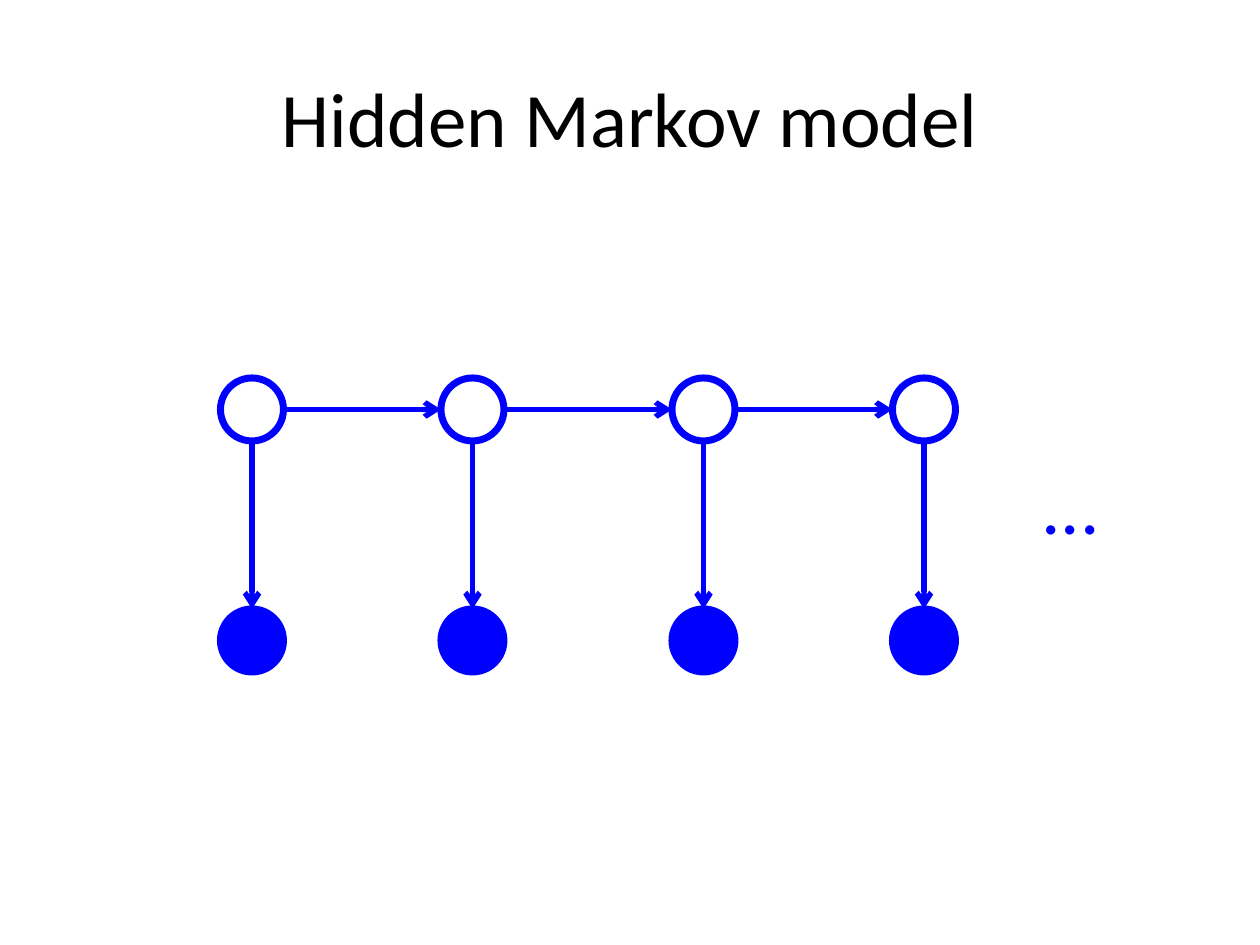
import pptx
import pptx.util
import pptx.dml.color
import pptx.enum.shapes
import pptx.enum.text
import pptx.oxml.ns
import lxml.etree

BLUE = pptx.dml.color.RGBColor(0x00, 0x00, 0xFF)
BLACK = pptx.dml.color.RGBColor(0x00, 0x00, 0x00)

# Grid of 120 columns by 90 rows: twelve units to the inch
UNIT = pptx.util.Inches(1) // 12
NODE = 6                      # node size
COLS = (21, 42, 64, 85)       # left edge of each time step
STATE, SEEN = 36, 58          # top edge of the two node rows


class Sketch:
    font = "Calibri"
    size = pptx.util.Pt(44)
    rim = pptx.util.Pt(4)
    edge = pptx.util.Pt(3)

    def __init__(self, slide):
        self.slide = slide

    def grid(self, *cells):
        return [round(cell * UNIT) for cell in cells]

    def text(self, words, box, color, align, anchor, wrap):
        frame = self.slide.shapes.add_textbox(*self.grid(*box)).text_frame
        frame.word_wrap = wrap
        frame.vertical_anchor = anchor
        para = frame.paragraphs[0]
        para.alignment = align
        run = para.add_run()
        run.text = words
        run.font.name = self.font
        run.font.size = self.size
        run.font.color.rgb = color

    def node(self, col, row, solid):
        node = self.slide.shapes.add_shape(
            pptx.enum.shapes.MSO_SHAPE.OVAL, *self.grid(col, row, NODE, NODE))
        node.shadow.inherit = False
        node.line.color.rgb = BLUE
        node.line.width = self.rim
        if solid:
            node.fill.solid()
            node.fill.fore_color.rgb = BLUE
        else:
            node.fill.background()

    def arrow(self, *ends):
        link = self.slide.shapes.add_connector(
            pptx.enum.shapes.MSO_CONNECTOR.STRAIGHT, *self.grid(*ends))
        link.line.color.rgb = BLUE
        link.line.width = self.edge
        tag = pptx.oxml.ns.qn
        head = lxml.etree.SubElement(link.line._get_or_add_ln(), tag("a:tailEnd"))
        head.set("type", "arrow")
        lxml.etree.SubElement(link._element.spPr, tag("a:effectLst"))


def main():
    deck = pptx.Presentation()
    deck.slide_width, deck.slide_height = 120 * UNIT, 90 * UNIT
    draw = Sketch(deck.slides.add_slide(deck.slide_layouts[6]))
    align = pptx.enum.text.PP_ALIGN
    anchor = pptx.enum.text.MSO_ANCHOR

    # Title
    draw.text("Hidden Markov model", (6, 3.6, 108, 15), BLACK,
              align.CENTER, anchor.MIDDLE, True)

    # Hidden states, each with its observation below
    half = NODE / 2
    for col in COLS:
        draw.node(col, STATE, False)
        draw.node(col, SEEN, True)
        draw.arrow(col + half, STATE + NODE, col + half, SEEN)

    # Steps from state to state
    for here, there in zip(COLS, COLS[1:]):
        draw.arrow(here + NODE, STATE + half, there, STATE + half)

    # The chain goes on
    draw.text("...", (98, 43, 8, 10), BLUE, align.LEFT, anchor.TOP, False)

    deck.save("out.pptx")


if __name__ == "__main__":
    main()
